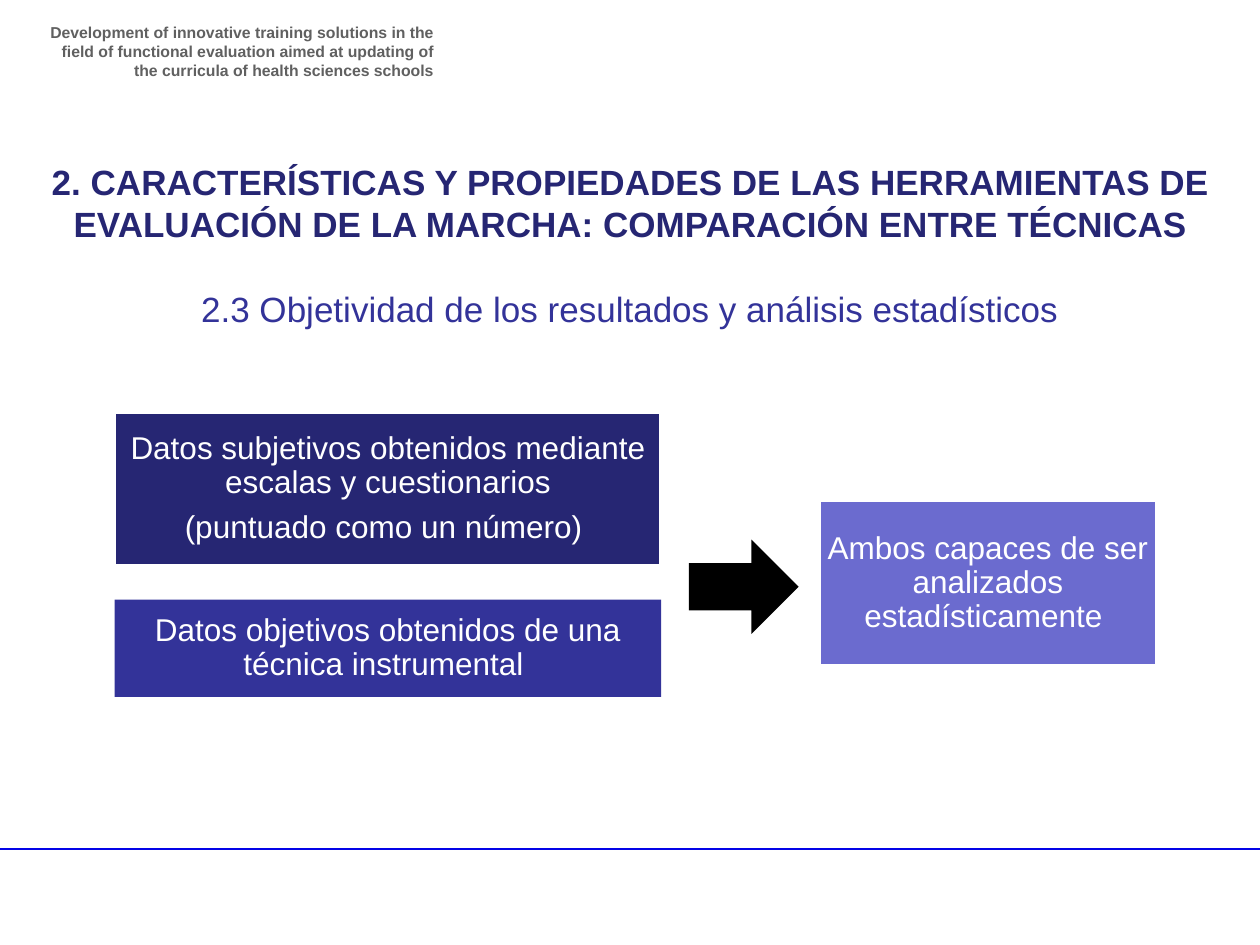
from pptx import Presentation
from pptx.dml.color import RGBColor
from pptx.enum.shapes import MSO_CONNECTOR, MSO_SHAPE
from pptx.enum.text import MSO_ANCHOR, MSO_AUTO_SIZE, PP_ALIGN
from pptx.oxml.ns import qn
from pptx.util import Cm, Pt
from lxml.etree import SubElement

NAVY = RGBColor(0x26, 0x26, 0x73)
BLUE = RGBColor(0x33, 0x33, 0x99)
LILAC = RGBColor(0x6B, 0x6B, 0xCF)
RULE = RGBColor(0x04, 0x04, 0xE6)
GREY = RGBColor(0x60, 0x60, 0x60)
WHITE = RGBColor(0xFF, 0xFF, 0xFF)
BLACK = RGBColor(0, 0, 0)

# Places are left, top, width, height in cm.
HEAD = ("Development of innovative training solutions in the ﬁeld of functional "
        "evaluation aimed at updating of the curricula of health sciences schools")
HEAD_AT = (0.71, 0.33, 8.28, 1.19)
TITLE = ("2. CARACTERÍSTICAS Y PROPIEDADES DE LAS HERRAMIENTAS DE EVALUACIÓN "
         "DE LA MARCHA: COMPARACIÓN ENTRE TÉCNICAS")
TITLE_AT = (0.71, 3.1, 24, 1.96)
TOPIC = "2.3 Objetividad de los resultados y análisis estadísticos"
TOPIC_AT = (3.5, 5.66, 18.4, 1.12)
BOXES = [
    ((2.31, 8.31, 11.02, 3.1), NAVY, WHITE,
     ["Datos subjetivos obtenidos mediante escalas y cuestionarios",
      "(puntuado como un número) "]),
    ((2.31, 12.09, 11.02, 1.96), BLUE, None,
     ["Datos objetivos obtenidos de una técnica instrumental "]),
    ((16.51, 10.08, 6.81, 3.35), LILAC, WHITE,
     ["Ambos capaces de ser analizados estadísticamente "]),
]
ARROW_AT = (13.89, 10.88, 2.21, 1.9)
RULE_Y = 17.12


def place(at):
    return [Cm(n) for n in at]


def write(shape, lines, size, color, bold=False, align=PP_ALIGN.CENTER,
          anchor=MSO_ANCHOR.TOP, pad=(0.25, 0.13), lead=None, after=None):
    frame = shape.text_frame
    frame.word_wrap = True
    frame.auto_size = MSO_AUTO_SIZE.NONE
    frame.vertical_anchor = anchor
    frame.margin_left = frame.margin_right = Cm(pad[0])
    frame.margin_top = frame.margin_bottom = Cm(pad[1])
    for i, line in enumerate(lines):
        para = frame.add_paragraph() if i else frame.paragraphs[0]
        para.alignment = align
        para.line_spacing = lead
        para.space_after = after
        run = para.add_run()
        run.text = line
        font = run.font
        font.name, font.size, font.bold = "Arial", Pt(size), bold
        font.color.rgb = color


def block(slide, kind, at, fill, edge=None):
    shape = slide.shapes.add_shape(kind, *place(at))
    shape.shadow.inherit = False
    shape.fill.solid()
    shape.fill.fore_color.rgb = fill
    if edge is None:
        shape.line.fill.background()
    else:
        shape.line.color.rgb = edge
        shape.line.width = Pt(2)
    return shape


def main():
    deck = Presentation()
    deck.slide_width, deck.slide_height = Cm(25.4), Cm(19.05)
    slide = deck.slides.add_slide(deck.slide_layouts[5])
    shapes = slide.shapes

    rule = shapes.add_connector(MSO_CONNECTOR.STRAIGHT, Cm(-0.13), Cm(RULE_Y),
                                deck.slide_width, Cm(RULE_Y))
    rule.line.color.rgb = RULE
    rule.line.width = Pt(1)
    SubElement(rule._element.spPr, qn("a:effectLst"))

    head = shapes.add_textbox(*place(HEAD_AT))
    write(head, [HEAD], 9, GREY, bold=True, align=PP_ALIGN.RIGHT)

    for at, fill, edge, lines in BOXES:
        box = block(slide, MSO_SHAPE.RECTANGLE, at, fill, edge)
        write(box, lines, 18, WHITE, anchor=MSO_ANCHOR.MIDDLE,
              pad=(0.03, 0.03), lead=0.9, after=Pt(6.3))
    block(slide, MSO_SHAPE.RIGHT_ARROW, ARROW_AT, BLACK)

    title = shapes.title
    title.left, title.top, title.width, title.height = place(TITLE_AT)
    write(title, [TITLE], 20, NAVY, bold=True)
    topic = shapes.add_textbox(*place(TOPIC_AT))
    write(topic, [TOPIC], 20, BLUE)

    deck.save("out.pptx")


if __name__ == "__main__":
    main()
